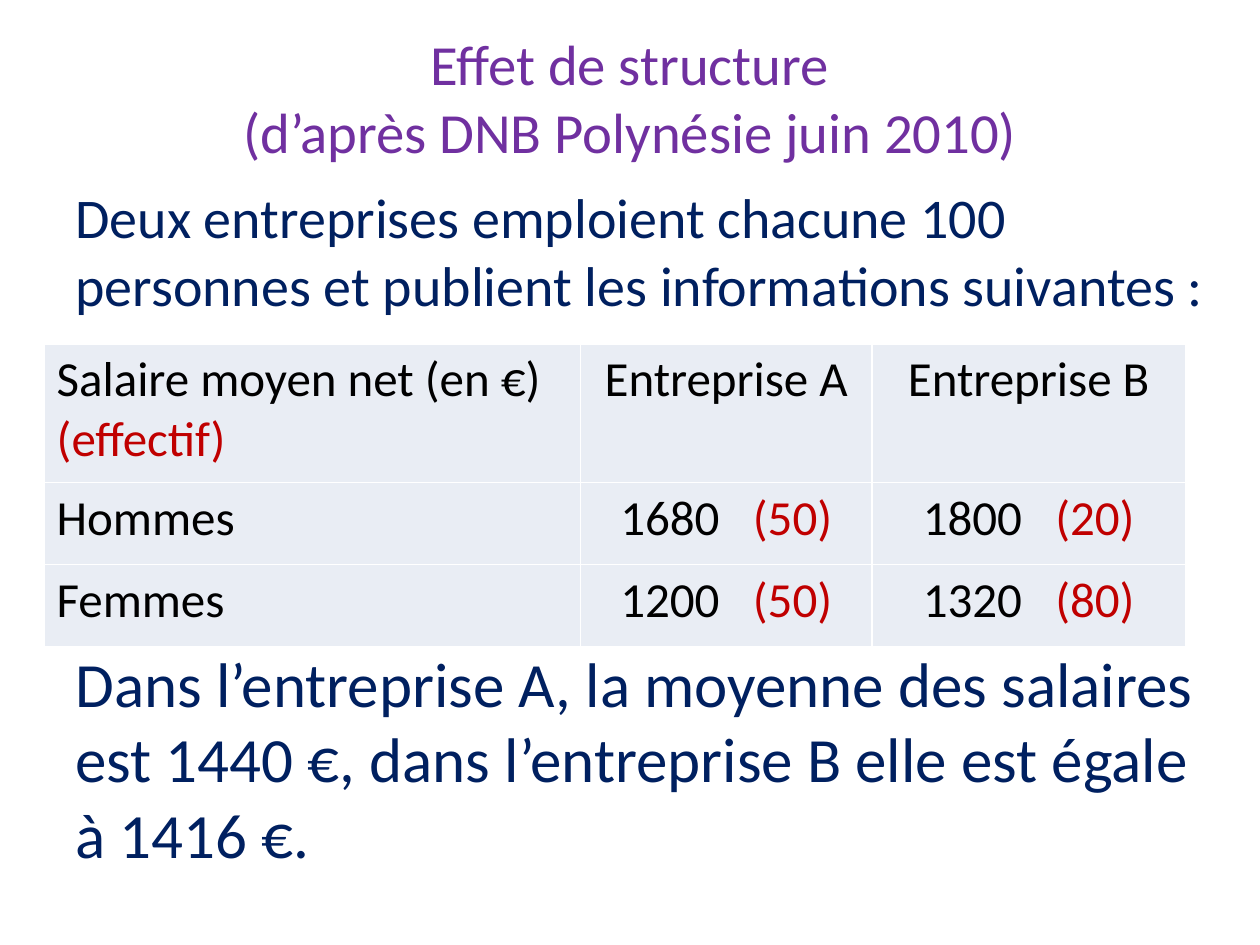
from lxml import etree
from pptx import Presentation
from pptx.dml.color import RGBColor
from pptx.enum.text import MSO_ANCHOR, PP_ALIGN
from pptx.oxml.ns import qn
from pptx.util import Pt

LEFT, CENTER = PP_ALIGN.LEFT, PP_ALIGN.CENTER
TOP, MIDDLE = MSO_ANCHOR.TOP, MSO_ANCHOR.MIDDLE
FONT = "Calibri"
PURPLE, NAVY, BLACK, RED = "7030A0", "002060", "000000", "C00000"
CELL_FILL, BORDER = "E9EDF4", "FFFFFF"

TITLE = ["Effet de structure", "(d’après DNB Polynésie juin 2010)"]
INTRO = ["Deux entreprises emploient chacune 100 personnes et publient les informations suivantes :"]
CONCLUSION = ["Dans l’entreprise A, la moyenne des salaires est 1440 €, dans l’entreprise B elle est égale à 1416 €."]
TEXTS = [
    (TITLE, (36, 21.6, 648, 67), 32.4, PURPLE, CENTER, MIDDLE),
    (INTRO, (36, 101, 670, 86), 32, NAVY, LEFT, TOP),
    (CONCLUSION, (36, 364.5, 670, 140), 36, NAVY, LEFT, TOP),
]

HEADERS = ["Entreprise A", "Entreprise B"]
CORNER = ["Salaire moyen net (en €)", "(effectif)"]
SALARIES = [
    ("Hommes", [("1680", "(50)"), ("1800", "(20)")]),
    ("Femmes", [("1200", "(50)"), ("1320", "(80)")]),
]
COLUMN_WIDTHS = [306.6, 166.4, 179.3]
ROW_HEIGHTS = [79.2, 46.8, 46.8]
TABLE_LEFT, TABLE_TOP = 25.2, 196.6
TABLE_SIZE = 28
COUNT_GAP = 12.7


def color(value):
    return RGBColor.from_string(value)


def add_run(paragraph, text, size, ink):
    run = paragraph.add_run()
    run.text = text
    run.font.name = FONT
    run.font.size = Pt(size)
    run.font.color.rgb = color(ink)
    return run


def add_text(slide, lines, box, size, ink, align, anchor):
    frame = slide.shapes.add_textbox(*map(Pt, box)).text_frame
    frame.word_wrap = True
    frame.vertical_anchor = anchor
    paragraph = frame.paragraphs[0]
    paragraph.alignment = align
    for number, line in enumerate(lines):
        if number:
            paragraph.add_line_break()
        add_run(paragraph, line, size, ink)


def style_cell(cell):
    properties = cell._tc.get_or_add_tcPr()
    for side in ("a:lnL", "a:lnR", "a:lnT", "a:lnB"):
        line = etree.SubElement(properties, qn(side), w=str(Pt(1)))
        fill = etree.SubElement(line, qn("a:solidFill"))
        etree.SubElement(fill, qn("a:srgbClr"), val=BORDER)
    cell.fill.solid()
    cell.fill.fore_color.rgb = color(CELL_FILL)


def fill_cell(cell, paragraphs, align):
    frame = cell.text_frame
    for number, runs in enumerate(paragraphs):
        paragraph = frame.add_paragraph() if number else frame.paragraphs[0]
        paragraph.alignment = align
        for position, (text, ink) in enumerate(runs):
            if position:
                gap = add_run(paragraph, " ", TABLE_SIZE, BLACK)
                gap.font._element.set("spc", str(round(COUNT_GAP * 100)))
            add_run(paragraph, text, TABLE_SIZE, ink)


def add_salary_table(slide):
    table = slide.shapes.add_table(
        len(ROW_HEIGHTS), len(COLUMN_WIDTHS), Pt(TABLE_LEFT), Pt(TABLE_TOP),
        Pt(sum(COLUMN_WIDTHS)), Pt(sum(ROW_HEIGHTS))).table
    table.first_row = False
    table.horz_banding = False
    for column, width in zip(table.columns, COLUMN_WIDTHS):
        column.width = Pt(width)
    for row, height in zip(table.rows, ROW_HEIGHTS):
        row.height = Pt(height)

    corner = [[(text, ink)] for text, ink in zip(CORNER, (BLACK, RED))]
    grid = [[corner] + [[[(name, BLACK)]] for name in HEADERS]]
    for group, figures in SALARIES:
        grid.append([[[(group, BLACK)]]] + [
            [[(salary, BLACK), (count, RED)]] for salary, count in figures])
    for r, row in enumerate(grid):
        for c, paragraphs in enumerate(row):
            cell = table.cell(r, c)
            style_cell(cell)
            fill_cell(cell, paragraphs, CENTER if c else LEFT)


def main():
    deck = Presentation()
    deck.slide_width, deck.slide_height = Pt(720), Pt(540)
    slide = deck.slides.add_slide(deck.slide_layouts[6])
    for text in TEXTS:
        add_text(slide, *text)
    add_salary_table(slide)
    deck.save("out.pptx")


if __name__ == "__main__":
    main()
